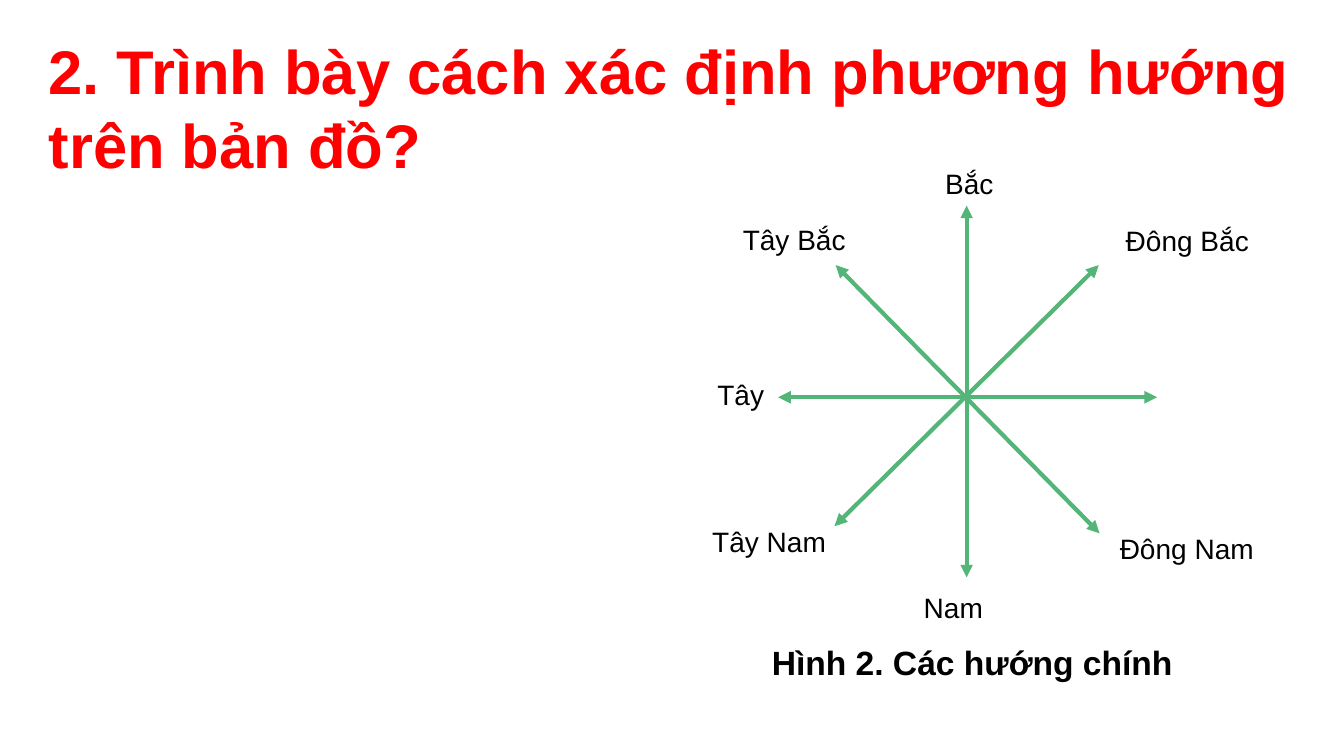
from typing import NamedTuple

import pptx
import pptx.dml.color
import pptx.enum.dml
import pptx.enum.shapes
import pptx.enum.text
import pptx.oxml.ns
import pptx.shapes.base
import pptx.slide
import pptx.util
from lxml import etree
from pptx.util import Cm

RED = pptx.dml.color.RGBColor(0xFF, 0x00, 0x00)
BLACK = pptx.dml.color.RGBColor(0x00, 0x00, 0x00)
GREEN = pptx.dml.color.RGBColor(0x53, 0xB5, 0x78)
FONT = "Arial"
LABEL_HEIGHT = 1.11


class Axis(NamedTuple):
    """A two-headed arrow, in centimetres."""
    start_x: float
    start_y: float
    end_x: float
    end_y: float


class Label(NamedTuple):
    """A direction name and its box, in centimetres."""
    text: str
    left: float
    top: float
    width: float = 4.06


AXES = [
    Axis(19.61, 10.01, 29.16, 10.01),
    Axis(24.36, 5.18, 24.36, 14.55),
    Axis(21.03, 13.26, 27.69, 6.68),
    Axis(21.06, 6.68, 27.71, 13.44),
]

LABELS = [
    Label("Bắc", 23.57, 4.06, 2.57),
    Label("Đông Bắc", 28.12, 5.51),
    Label("Tây Bắc", 18.47, 5.49, 3.48),
    Label("Tây", 17.83, 9.4),
    Label("Tây Nam", 17.7, 13.08),
    Label("Nam", 23.03, 14.76),
    Label("Đông Nam", 27.97, 13.26),
]


def write_text(shape: pptx.shapes.base.BaseShape, text: str, *, size: int = 20,
               color: pptx.dml.color.RGBColor = BLACK, bold: bool = False) -> None:
    frame = shape.text_frame
    frame.word_wrap = True
    frame.auto_size = pptx.enum.text.MSO_AUTO_SIZE.SHAPE_TO_FIT_TEXT
    frame.vertical_anchor = pptx.enum.text.MSO_ANCHOR.TOP
    paragraph = frame.paragraphs[0]
    paragraph.alignment = pptx.enum.text.PP_ALIGN.LEFT
    run = paragraph.add_run()
    run.text = text
    run.font.name = FONT
    run.font.size = pptx.util.Pt(size)
    run.font.bold = bold
    run.font.color.rgb = color


def add_axis(slide: pptx.slide.Slide, axis: Axis) -> None:
    connector = slide.shapes.add_connector(
        pptx.enum.shapes.MSO_CONNECTOR.STRAIGHT, *(Cm(value) for value in axis))
    connector.line.color.rgb = GREEN
    connector.line.width = pptx.util.Pt(3)
    line = connector.line._get_or_add_ln()
    for end in ("a:headEnd", "a:tailEnd"):
        etree.SubElement(line, pptx.oxml.ns.qn(end), type="triangle")
    etree.SubElement(connector._element.spPr, pptx.oxml.ns.qn("a:effectLst"))


def main() -> None:
    presentation = pptx.Presentation()
    presentation.slide_width = Cm(33.87)
    presentation.slide_height = Cm(19.05)
    slide = presentation.slides.add_slide(presentation.slide_layouts[5])

    title = slide.shapes.title
    title.left, title.top, title.width, title.height = Cm(0.97), Cm(0.71), Cm(31.95), Cm(4.01)
    write_text(title, "2. Trình bày cách xác định phương hướng trên bản đồ?",
               size=44, color=RED, bold=True)

    for axis in AXES:
        add_axis(slide, axis)
    for label in LABELS:
        box = slide.shapes.add_textbox(
            Cm(label.left), Cm(label.top), Cm(label.width), Cm(LABEL_HEIGHT))
        write_text(box, label.text)

    caption = slide.shapes.add_textbox(Cm(19.2), Cm(16.05), Cm(11.73), Cm(1.27))
    write_text(caption, "Hình 2. Các hướng chính", size=24, bold=True)

    presentation.save("out.pptx")


if __name__ == "__main__":
    main()
